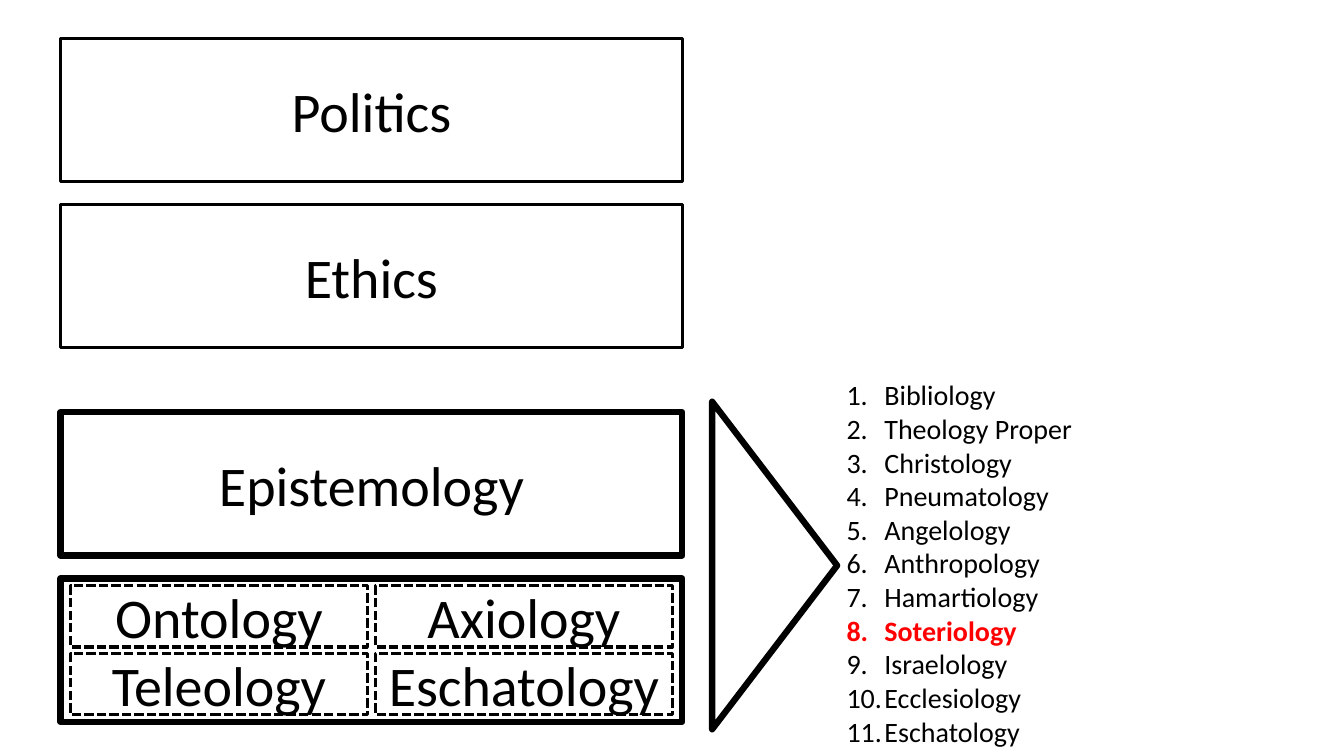
from dataclasses import dataclass

from lxml.etree import SubElement
from pptx import Presentation
from pptx.dml.color import RGBColor
from pptx.enum.dml import MSO_LINE_DASH_STYLE as Dash
from pptx.enum.shapes import MSO_AUTO_SHAPE_TYPE as ShapeType
from pptx.enum.text import MSO_ANCHOR as Anchor, MSO_AUTO_SIZE as AutoSize, PP_ALIGN as Align
from pptx.oxml.ns import qn
from pptx.util import Pt


@dataclass(frozen=True)
class Theme:
    font: str = "Calibri"
    ink: RGBColor = RGBColor(0, 0, 0)
    paper: RGBColor = RGBColor(255, 255, 255)
    accent: RGBColor = RGBColor(255, 0, 0)
    block_size: int = 40
    list_size: int = 20
    thin: float = 1.75
    dashed: float = 2.25
    thick: float = 4.5


THEME = Theme()
BRANCHES = ["Bibliology", "Theology Proper", "Christology", "Pneumatology",
            "Angelology", "Anthropology", "Hamartiology", "Soteriology",
            "Israelology", "Ecclesiology", "Eschatology"]
HIGHLIGHT = "Soteriology"
FOUNDATIONS = [["Ontology", "Axiology"], ["Teleology", "Eschatology"]]


def write(paragraph, text, size, color=THEME.ink, bold=False, align=Align.LEFT):
    paragraph.alignment = align
    run = paragraph.add_run()
    run.text = text
    run.font.name = THEME.font
    run.font.size = Pt(size)
    run.font.bold = bold
    run.font.color.rgb = color


def add_outline(shapes, kind, box, weight, dash=None):
    shape = shapes.add_shape(kind, *map(Pt, box))
    shape.shadow.inherit = False
    shape.fill.background()
    shape.line.color.rgb = THEME.ink
    shape.line.width = Pt(weight)
    if dash:
        shape.line.dash_style = dash
    return shape


def add_block(shapes, box, text, weight, dash=None):
    block = add_outline(shapes, ShapeType.RECTANGLE, box, weight, dash)
    block.text_frame.vertical_anchor = Anchor.MIDDLE
    write(block.text_frame.paragraphs[0], text, THEME.block_size, align=Align.CENTER)


def add_foundations(slide, box):
    left, top, width, height = box
    margin_x, margin_y, gap_x, gap_y = 7.2, 5.04, 5.76, 4.32
    cell_width = (width - 2 * margin_x - gap_x) / 2
    cell_height = (height - 2 * margin_y - gap_y) / 2
    shapes = slide.shapes.add_group_shape().shapes
    add_outline(shapes, ShapeType.RECTANGLE, box, THEME.thick)
    for row, names in enumerate(FOUNDATIONS):
        for column, name in enumerate(names):
            cell = (left + margin_x + column * (cell_width + gap_x),
                    top + margin_y + row * (cell_height + gap_y),
                    cell_width, cell_height)
            add_block(shapes, cell, name, THEME.dashed, Dash.SQUARE_DOT)


def add_tower(slide, box):
    left, top, width, height = box
    block_height, pitch = 102.24, 118.8
    lower_top = top + height - block_height - pitch
    for name, block_top, weight in [("Politics", top, THEME.thin),
                                    ("Ethics", top + pitch, THEME.thin),
                                    ("Epistemology", lower_top, THEME.thick)]:
        add_block(slide.shapes, (left, block_top, width, block_height), name, weight)
    add_foundations(slide, (left, lower_top + pitch, width, block_height))


def add_branch_list(slide, box):
    text_box = slide.shapes.add_textbox(*map(Pt, box))
    frame = text_box.text_frame
    frame.word_wrap = True
    frame.auto_size = AutoSize.SHAPE_TO_FIT_TEXT
    for index, name in enumerate(BRANCHES):
        paragraph = frame.add_paragraph() if index else frame.paragraphs[0]
        marked = name == HIGHLIGHT
        write(paragraph, name, THEME.list_size, bold=marked,
              color=THEME.accent if marked else THEME.ink)
        # Automatic numbering with a hanging indent
        properties = paragraph._p.get_or_add_pPr()
        properties.set("marL", str(Pt(27)))
        properties.set("indent", str(-Pt(27)))
        SubElement(properties, qn("a:buFont"), typeface="+mj-lt")
        SubElement(properties, qn("a:buAutoNum"), type="arabicPeriod")


def add_pointer(slide, box):
    # The triangle is turned a quarter, so its sides swap about the centre
    left, top, width, height = box
    upright = (left + (width - height) / 2, top + (height - width) / 2, height, width)
    pointer = add_outline(slide.shapes, ShapeType.ISOSCELES_TRIANGLE, upright, THEME.thick)
    pointer.fill.solid()
    pointer.fill.fore_color.rgb = THEME.paper
    pointer.rotation = 90


def main():
    presentation = Presentation()
    presentation.slide_width, presentation.slide_height = Pt(960), Pt(540)
    slide = presentation.slides.add_slide(presentation.slide_layouts[6])
    add_tower(slide, (43.2, 27.36, 444.24, 488.16))
    add_branch_list(slide, (597.6, 266.4, 236.16, 273.6))
    add_pointer(slide, (508.68, 286.92, 89.28, 234))
    presentation.save("out.pptx")


if __name__ == "__main__":
    main()
